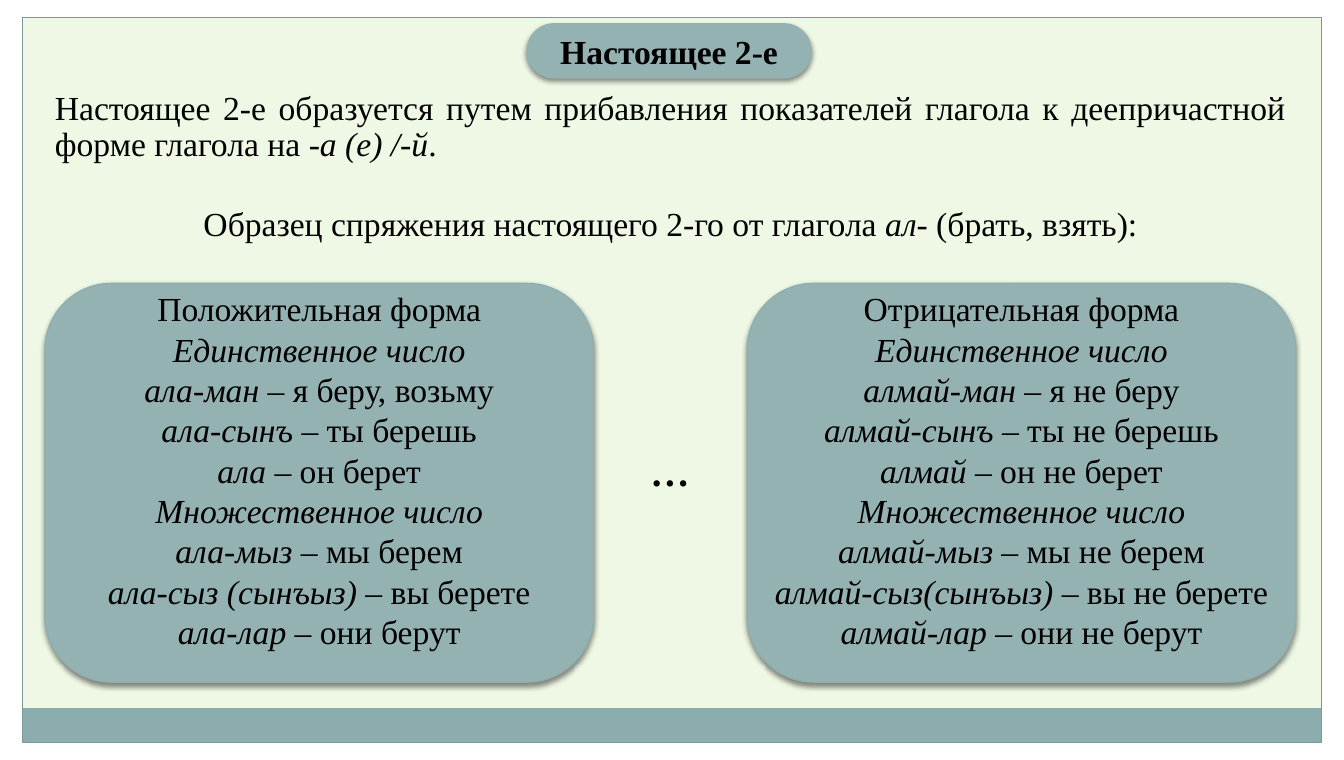
from dataclasses import dataclass

from lxml import etree
from pptx import Presentation
from pptx.dml.color import RGBColor
from pptx.enum.shapes import MSO_SHAPE
from pptx.enum.text import MSO_ANCHOR, MSO_AUTO_SIZE, PP_ALIGN
from pptx.oxml import parse_xml
from pptx.oxml.ns import nsdecls, qn
from pptx.util import Inches, Pt

RECTANGLE = MSO_SHAPE.RECTANGLE
PILL = MSO_SHAPE.ROUNDED_RECTANGLE
CARD = MSO_SHAPE.FLOWCHART_ALTERNATE_PROCESS
CENTER, JUSTIFY = PP_ALIGN.CENTER, PP_ALIGN.JUSTIFY
TOP, MIDDLE = MSO_ANCHOR.TOP, MSO_ANCHOR.MIDDLE
NO_AUTOFIT = MSO_AUTO_SIZE.NONE
COMPARISON_LAYOUT = 4
COLUMNS, ROWS = 60, 44


@dataclass(frozen=True)
class Theme:
    font: str = "Times New Roman"
    text: str = "000000"
    background: str = "EFF8E5"
    margin: str = "FFFFFF"
    band: str = "8CADAE"
    frame: str = "7C999A"
    card: str = "95B2B3"
    body_size: int = 24
    ellipsis_size: int = 28
    line_width: float = 0.75


class SlideBuilder:
    def __init__(self, presentation, theme):
        self.theme = theme
        self.column = presentation.slide_width / COLUMNS
        self.row = presentation.slide_height / ROWS
        self.slide = presentation.slides.add_slide(
            presentation.slide_layouts[COMPARISON_LAYOUT])
        background = self.slide.background.fill
        background.solid()
        background.fore_color.rgb = RGBColor.from_string(theme.background)

    def place(self, left, top, width, height):
        return (round(left * self.column), round(top * self.row),
                round(width * self.column), round(height * self.row))

    def shape(self, kind, box, fill=None, line=None, shadow=False):
        shape = self.slide.shapes.add_shape(kind, *self.place(*box))
        shape.shadow.inherit = False
        if fill:
            shape.fill.solid()
            shape.fill.fore_color.rgb = RGBColor.from_string(fill)
        else:
            shape.fill.background()
        if line:
            shape.line.color.rgb = RGBColor.from_string(line)
            shape.line.width = Pt(self.theme.line_width)
        else:
            shape.line.fill.background()
        if shadow:
            effects = shape.element.spPr.find(qn("a:effectLst"))
            effects.append(parse_xml(
                f'<a:outerShdw {nsdecls("a")} blurRad="{Pt(4)}" dist="{Pt(2)}" '
                'dir="5400000" rotWithShape="0"><a:srgbClr val="000000">'
                '<a:alpha val="45000"/></a:srgbClr></a:outerShdw>'))
        return shape

    def placeholder(self, index, box, lines, **style):
        placeholder = self.slide.placeholders[index]
        placeholder.left, placeholder.top, placeholder.width, placeholder.height = self.place(*box)
        placeholder.element.getparent().append(placeholder.element)
        self.set_text(placeholder.text_frame, lines, **style)

    def text_box(self, box, lines, **style):
        text_box = self.slide.shapes.add_textbox(*self.place(*box))
        self.set_text(text_box.text_frame, lines, **style)

    def set_text(self, frame, lines, size=None, bold=False, align=CENTER,
                 anchor=TOP, spacing=1.0, before=0):
        frame.word_wrap = True
        frame.auto_size = NO_AUTOFIT
        frame.vertical_anchor = anchor
        frame.text = "\n".join(lines)
        for paragraph, line in zip(frame.paragraphs, lines):
            paragraph.text = ""
            paragraph.alignment = align
            paragraph.line_spacing = spacing
            paragraph.space_before = Pt(before)
            paragraph.space_after = Pt(0)
            properties = paragraph._p.get_or_add_pPr()
            properties.set("marL", "0")
            properties.set("indent", "0")
            etree.SubElement(properties, qn("a:buNone"))
            for position, part in enumerate(line.split("*")):
                if part:
                    run = paragraph.add_run()
                    run.text = part
                    run.font.name = self.theme.font
                    run.font.size = Pt(size or self.theme.body_size)
                    run.font.bold = bold
                    run.font.italic = position % 2 == 1
                    run.font.color.rgb = RGBColor.from_string(self.theme.text)


def conjugation(heading, singular, plural):
    lines = [heading]
    for number, forms in (("Единственное", singular), ("Множественное", plural)):
        lines.append(f"*{number} число*")
        lines.extend(f"*{form}* – {meaning}" for form, meaning in forms)
    return lines


AFFIRMATIVE = conjugation(
    "Положительная форма",
    [("ала-ман", "я беру, возьму"), ("ала-сынъ", "ты берешь"), ("ала", "он берет")],
    [("ала-мыз", "мы берем"), ("ала-сыз (сынъыз)", "вы берете"), ("ала-лар", "они берут")])
NEGATIVE = conjugation(
    "Отрицательная форма",
    [("алмай-ман", "я не беру"), ("алмай-сынъ", "ты не берешь"), ("алмай", "он не берет")],
    [("алмай-мыз", "мы не берем"), ("алмай-сыз(сынъыз)", "вы не берете"),
     ("алмай-лар", "они не берут")])
RULE = ("Настоящее 2-е образуется путем прибавления показателей глагола "
        "к деепричастной форме глагола на *-а (е) /-й*.")
SAMPLE = "Образец спряжения настоящего 2-го от глагола *ал-* (брать, взять):"


def main():
    theme = Theme()
    presentation = Presentation()
    presentation.slide_width = Inches(13.33)
    presentation.slide_height = Inches(7.54)
    builder = SlideBuilder(presentation, theme)

    for margin in ((0, ROWS - 1, COLUMNS, 1), (0, 0, COLUMNS, 1),
                   (COLUMNS - 1, 0, 1, ROWS), (0, 0, 1, ROWS)):
        builder.shape(RECTANGLE, margin, fill=theme.margin)
    builder.shape(RECTANGLE, (1, 41, COLUMNS - 2, 2), fill=theme.band)
    builder.shape(RECTANGLE, (1, 1, COLUMNS - 2, ROWS - 2), line=theme.frame)

    title_box = (23.5, 1.34, 12.74, 3.21)
    pill = builder.shape(PILL, title_box, fill=theme.card, shadow=True)
    pill.adjustments[0] = 0.5
    builder.placeholder(0, title_box, ["Настоящее 2-е"], bold=True, anchor=MIDDLE)
    builder.placeholder(1, (2, 5, 55.86, 5.72), [RULE],
                        align=JUSTIFY, spacing=0.9, before=11.9)
    builder.placeholder(3, (2, 11.44, 55.86, 2.92), [SAMPLE])

    for index, left, lines in ((2, 2, AFFIRMATIVE), (4, 33.35, NEGATIVE)):
        builder.shape(CARD, (left, 16.4, 24.5, 23.1), fill=theme.card,
                      line=theme.band, shadow=True)
        builder.placeholder(index, (left, 16.4, 24.5, 21.83), lines)
    builder.text_box((28.36, 25.62, 3.1, 3.33), ["…"],
                     size=theme.ellipsis_size, bold=True)

    presentation.save("out.pptx")


if __name__ == "__main__":
    main()
